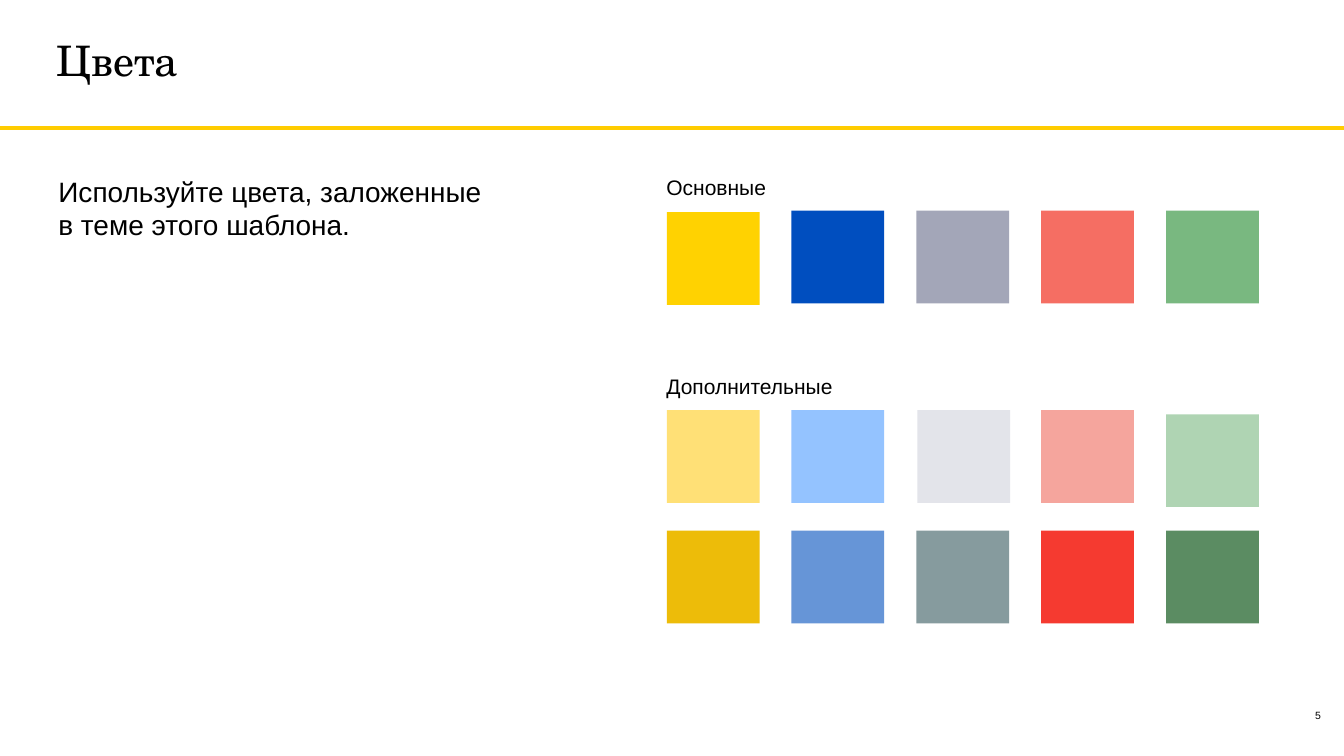
from pptx import Presentation
from pptx import util as u
from pptx.dml.color import RGBColor
from pptx.enum import shapes, text
from pptx.oxml.ns import qn
from lxml import etree

PX = u.Inches(1) // 100
WIDTH, HEIGHT = 2666, 1500
COLORS = {
    "black": "000000", "rule": "FFCC00",
    "yellow": "FFD201", "blue": "004EBF", "grey": "A3A6B8",
    "coral": "F56E63", "green": "79B880",
    "light yellow": "FFE076", "light blue": "94C3FF", "light grey": "E3E4EA",
    "light coral": "F5A59D", "light green": "AFD4B3",
    "dark yellow": "EDBC09", "dark blue": "6695D7", "dark grey": "869B9E",
    "dark coral": "F53A30", "dark green": "5B8C62",
}
HUES = ["yellow", "blue", "grey", "coral", "green"]
ROWS = [("", 418), ("light ", 814), ("dark ", 1053)]
NUDGES = {"yellow": (0, 3), "light grey": (2, 0), "light green": (0, 8)}
SWATCH = 184
GRID_LEFT, GRID_RIGHT = 1323, 2497


def color(name):
    return RGBColor.from_string(COLORS[name])


class PaletteSlide:
    font = "Arial"
    title_font = "TeX Gyre Schola"

    def __init__(self, prs):
        self.s = prs.slides.add_slide(prs.slide_layouts[5])

    def format_text(self, sp, words, size, font, align, anchor):
        tf = sp.text_frame
        tf.text = words
        tf.word_wrap = True
        tf.auto_size = text.MSO_AUTO_SIZE.NONE
        tf.vertical_anchor = anchor
        p = tf.paragraphs[0]
        p.alignment = align
        for r in p.runs:
            r.font.name = font
            r.font.size = u.Pt(size)
            r.font.color.rgb = color("black")
        return p

    def title(self, words, x, y, w, h):
        sp = self.s.shapes.title
        sp.left, sp.top, sp.width, sp.height = (v * PX for v in (x, y, w, h))
        p = self.format_text(sp, words, 60, self.title_font,
                             text.PP_ALIGN.LEFT, text.MSO_ANCHOR.MIDDLE)
        p.line_spacing = 0.9

    def label(self, words, x, y, w, h, size, align=text.PP_ALIGN.LEFT):
        sp = self.s.shapes.add_textbox(x * PX, y * PX, w * PX, h * PX)
        self.format_text(sp, words, size, self.font, align, text.MSO_ANCHOR.TOP)

    def rule(self, y, weight):
        sp = self.s.shapes.add_connector(
            shapes.MSO_CONNECTOR.STRAIGHT, 0, y * PX, WIDTH * PX, y * PX)
        sp.line.color.rgb = color("rule")
        sp.line.width = u.Pt(weight)
        etree.SubElement(sp._element.spPr, qn("a:effectLst"))

    def swatch(self, name, x, y):
        sp = self.s.shapes.add_shape(
            shapes.MSO_SHAPE.RECTANGLE, x * PX, y * PX, SWATCH * PX, SWATCH * PX)
        sp.shadow.inherit = False
        sp.fill.solid()
        sp.fill.fore_color.rgb = color(name)
        sp.line.fill.background()


def main():
    prs = Presentation()
    prs.slide_width, prs.slide_height = WIDTH * PX, HEIGHT * PX
    slide = PaletteSlide(prs)
    slide.rule(254, 5)
    slide.title("Цвета", 103, 0, 2459, 250)
    slide.label("Используйте цвета, заложенные\vв теме этого шаблона.",
                106, 341, 881, 1051, 40)
    for words, y in [("Основные", 341), ("Дополнительные", 737)]:
        slide.label(words, 1312, y, 1224, 150, 30)

    span = GRID_RIGHT - SWATCH - GRID_LEFT
    for shade, top in ROWS:
        for i, hue in enumerate(HUES):
            name = shade + hue
            dx, dy = NUDGES.get(name, (0, 0))
            left = GRID_LEFT + span * i // (len(HUES) - 1)
            slide.swatch(name, left + dx, top + dy)

    slide.label("5", 2591, 1402, 47, 80, 15, text.PP_ALIGN.CENTER)
    prs.save("out.pptx")


if __name__ == "__main__":
    main()
